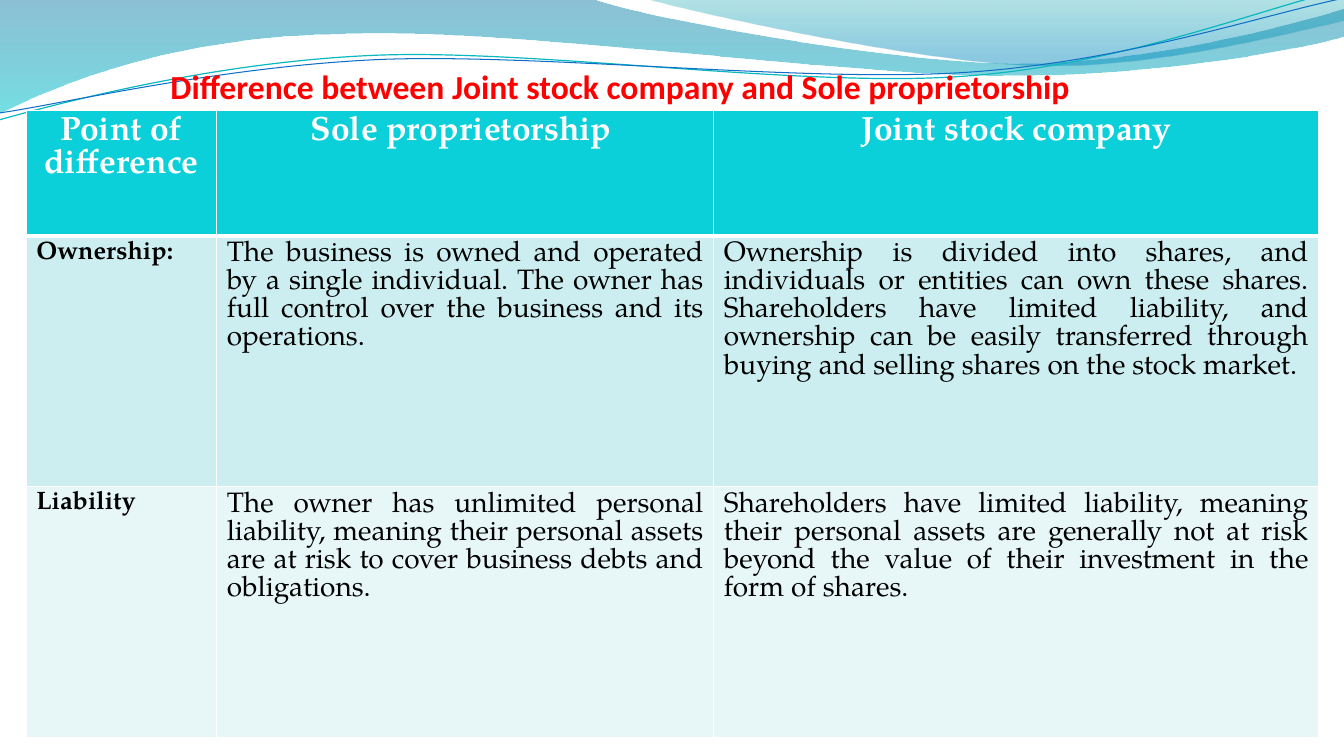
import math
import pptx
import pptx.util
import pptx.dml.color
import pptx.enum.text
import lxml.etree

PX = 9144  # 100 px to the inch
ALIGN = pptx.enum.text.PP_ALIGN
WHITE, BLACK = "FFFFFF", "000000"
qn = pptx.oxml.ns.qn


def rgb(code):
    return pptx.dml.color.RGBColor.from_string(code)


def curve(kinds, dots, close):
    """Draw an outline through px dots: L uses one dot, C two handles and an end."""
    dots = [(round(x * PX), round(y * PX)) for x, y in dots]
    pen = slide.shapes.build_freeform(*dots[0], scale=1.0)
    pen.add_line_segments(dots[1:], close=close)
    shape = pen.convert_to_shape()
    shape.shadow.inherit = False
    lines = iter(shape._element.findall(".//" + qn("a:lnTo")))
    for kind in kinds:
        line = next(lines)
        if kind == "C":
            arc = lxml.etree.Element(qn("a:cubicBezTo"))
            line.addprevious(arc)
            for part in (line, next(lines), next(lines)):
                arc.append(part[0])
                part.getparent().remove(part)
    return shape


deck = pptx.Presentation()
deck.slide_width, deck.slide_height = 1333 * PX, 750 * PX
slide = deck.slides.add_slide(deck.slide_layouts[5])

# Shaded bands, with stops of place, colour and opacity
bands = [
    ("LCCLCCCL",
     [(0, 0), (587, -1), (634, 17), (885, 63), (1011, 63), (1138, 63),
      (1278, 26), (1333, 9), (1335, 36), (1311, 44), (1160, 76), (994, 75),
      (829, 75), (509, 28), (343, 34), (172, 36), (61, 83), (-1, 113), (0, 0)],
     [(0, "0074A1", 45), (1, "00C6CF", 55)]),
    ("CCLL",
     [(639, -1), (679, 11), (909, 62), (1025, 65), (1141, 69), (1282, 32),
      (1333, 21), (1333, 0), (639, -1)],
     [(0, "00A1A9", 30), (0.8, "008BBF", 45)]),
]
for kinds, dots, stops in bands:
    band = curve(kinds, dots, True)
    band.line.fill.background()
    band.fill.gradient()
    band.fill.gradient_angle = 270
    for stop, (place, color, alpha) in zip(band.fill.gradient_stops, stops):
        stop.position = place
        stop.color.rgb = rgb(color)
    tint = band._element.spPr.findall(".//" + qn("a:srgbClr"))
    for node, (place, color, alpha) in zip(tint, stops):
        lxml.etree.SubElement(node, qn("a:alpha"), val=str(alpha * 1000))

# Thin waves, laid out level about their middle and then tilted
TILT = 2.7
sin, cos = math.sin(math.radians(TILT)), math.cos(math.radians(TILT))
waves = [
    ((665, 57.5),
     [(-1, 119), (64, 101), (211, 62), (369, 55), (527, 48), (790, 87),
      (950, 76), (1110, 66), (1252, 8), (1331, -10)], "0AB8BF", 0.85),
    ((667, 59),
     [(0, 112), (63, 103), (218, 66), (378, 59), (537, 53), (796, 82),
      (955, 72), (1115, 62), (1255, 14), (1334, -2)], "0F6FC6", 0.75),
]
for (mx, my), dots, color, width in waves:
    level = [(mx + (x - mx) * cos - (y - my) * sin,
              my + (x - mx) * sin + (y - my) * cos) for x, y in dots]
    wave = curve("CCC", level, False)
    wave.rotation = 360 - TILT
    wave.fill.background()
    wave.line.color.rgb = rgb(color)
    wave.line.width = pptx.util.Pt(width)

# Title, brought in front of the waves
title = slide.shapes.title
slide.shapes._spTree.append(title._element)
title.left, title.top, title.width, title.height = 159 * PX, 60 * PX, 1175 * PX, 50 * PX
frame = title.text_frame
frame.word_wrap = True
frame.auto_size = pptx.enum.text.MSO_AUTO_SIZE.NONE
frame.vertical_anchor = pptx.enum.text.MSO_ANCHOR.MIDDLE
para = frame.paragraphs[0]
para.alignment = ALIGN.JUSTIFY
run = para.add_run()
run.text = "Difference between Joint stock company and Sole proprietorship "
run.font.name, run.font.size, run.font.bold = "Calibri", pptx.util.Pt(24), True
run.font.color.rgb = rgb("FF0000")

# Comparison table
rows = [
    ("Point of difference", "Sole proprietorship ", "Joint stock company"),
    ("Ownership:",
     "The business is owned and operated by a single individual. The owner has "
     "full control over the business and its operations.",
     "Ownership is divided into shares, and individuals or entities can own these "
     "shares. Shareholders have limited liability, and ownership can be easily "
     "transferred through buying and selling shares on the stock market."),
    ("Liability",
     "The owner has unlimited personal liability, meaning their personal assets "
     "are at risk to cover business debts and obligations.",
     "Shareholders have limited liability, meaning their personal assets are "
     "generally not at risk beyond the value of their investment in the form of "
     "shares."),
]
fills = ["0BD0D9", "CCEEF1", "E7F7F8"]
table = slide.shapes.add_table(3, 3, 26 * PX, 110 * PX, 1282 * PX, 622 * PX).table
for col, width in zip(table.columns, (189, 493, 600)):
    col.width = width * PX
for row, height in zip(table.rows, (124, 249, 249)):
    row.height = height * PX

for r, texts in enumerate(rows):
    for c, text in enumerate(texts):
        cell = table.cell(r, c)
        cell.fill.solid()
        cell.fill.fore_color.rgb = rgb(fills[r])
        para = cell.text_frame.paragraphs[0]
        if r == 0:
            size, color, para.alignment = 24, WHITE, ALIGN.CENTER
        elif c == 0:
            size, color, para.alignment = 18, BLACK, ALIGN.LEFT
        else:
            size, color, para.alignment = 20, BLACK, ALIGN.JUSTIFY
        run = para.add_run()
        run.text = text
        run.font.name, run.font.size = "TeX Gyre Pagella", pptx.util.Pt(size)
        run.font.bold = r == 0 or c == 0
        run.font.color.rgb = rgb(color)
        for i, side in enumerate(("lnL", "lnR", "lnT", "lnB")):
            thick = (side, r) in (("lnB", 0), ("lnT", 1))
            edge = lxml.etree.Element(qn("a:" + side), w=str(38100 if thick else 12700))
            solid = lxml.etree.SubElement(edge, qn("a:solidFill"))
            lxml.etree.SubElement(solid, qn("a:srgbClr"), val=WHITE)
            cell._tc.get_or_add_tcPr().insert(i, edge)

deck.save("out.pptx")
